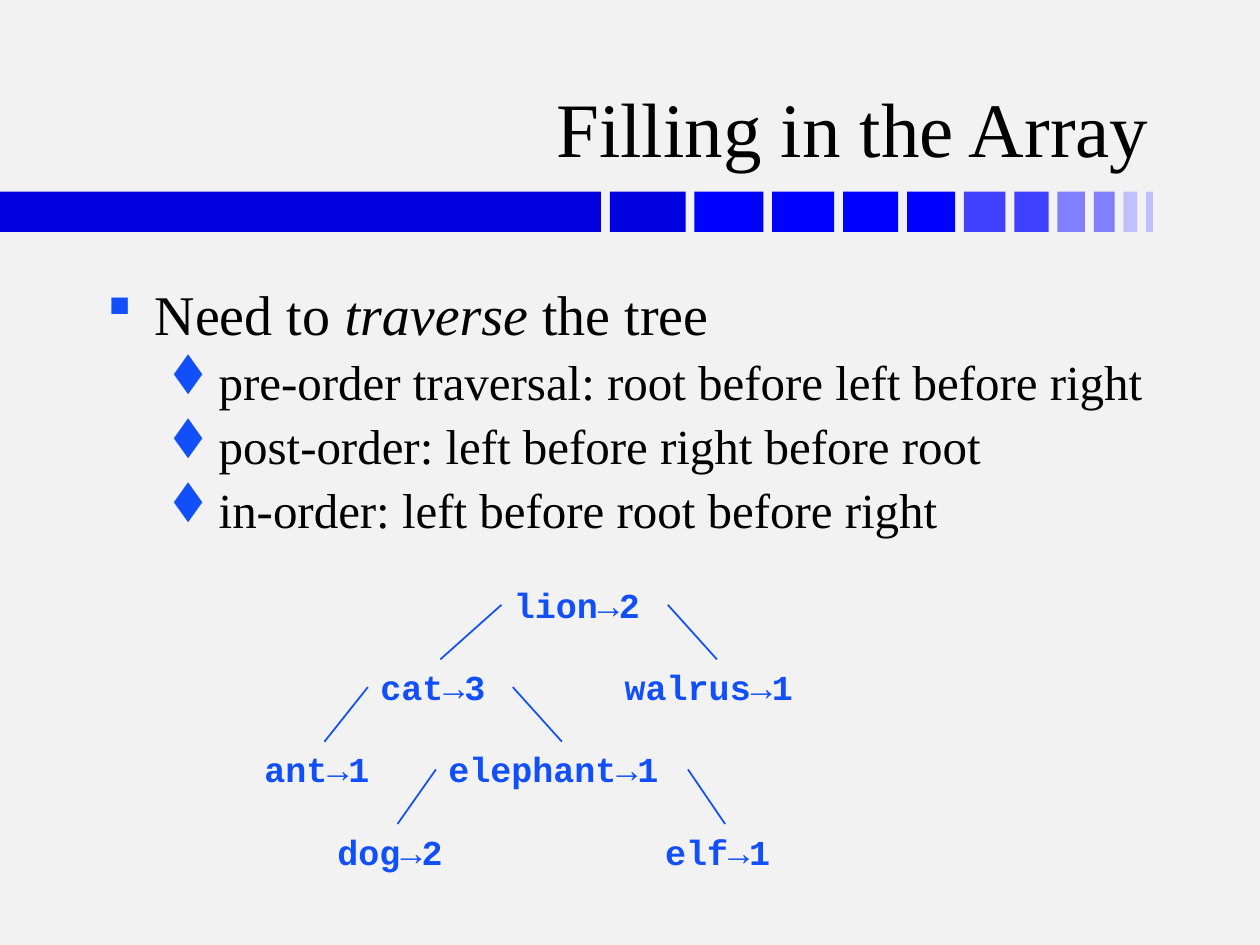
from lxml import etree
from pptx import Presentation, util as u
from pptx.dml.color import RGBColor
from pptx.enum import shapes, text
from pptx.oxml.ns import qn

PAPER = RGBColor(0xF2, 0xF2, 0xF2)
BLACK = RGBColor(0x00, 0x00, 0x00)
ACCENT = RGBColor(0x11, 0x4F, 0xFB)
NAVY = RGBColor(0x00, 0x00, 0xE0)
BLUE = RGBColor(0x00, 0x00, 0xFF)
MID = RGBColor(0x40, 0x40, 0xFF)
PALE = RGBColor(0x80, 0x80, 0xFF)
FAINT = RGBColor(0xC0, 0xC0, 0xFF)

CELL = u.Inches(0.1)
BLOCKS = [NAVY, BLUE, BLUE, BLUE, BLUE, MID, MID, PALE, PALE, FAINT, FAINT]
TITLE = dict(name="Times New Roman", size=u.Pt(44))
ITEM = dict(name="Times New Roman", size=u.Pt(32))
SUBITEM = dict(name="Times New Roman", size=u.Pt(28))
NODE = dict(name="Courier New", size=u.Pt(20), bold=True)
SQUARE, DIAMOND = "§", "t"
LEVELS = [(SQUARE, 0.38, 0.38, ITEM), (DIAMOND, 0.81, 0.31, SUBITEM)]
BULLETS = [
    (0, [("Need to ", False), ("traverse", True), (" the tree", False)]),
    (1, [("pre-order traversal: root before left before right", False)]),
    (1, [("post-order: left before right before root", False)]),
    (1, [("in-order: left before root before right", False)]),
]
NODES = [("lion→2", 19.8, 0), ("cat→3", 9.2, 1), ("walrus→1", 28.6, 1),
         ("ant→1", 0, 2), ("elephant→1", 14.6, 2), ("dog→2", 5.8, 3), ("elf→1", 31.8, 3)]
EDGES = [("lion→2", "cat→3", "walrus→1"), ("cat→3", "ant→1", "elephant→1"),
         ("elephant→1", "dog→2", "elf→1")]


def cells(*values):
    """Turn grid columns or rows into lengths."""
    return [u.Emu(round(v * CELL)) for v in values]


def style(font, color, formats):
    """Apply a dict of format values and a colour to a font."""
    for key, value in formats.items():
        setattr(font, key, value)
    font.color.rgb = color


def add_text(s, box, content, formats, color, align, anchor=text.MSO_ANCHOR.TOP):
    """Place one line of text in a box."""
    sp = s.shapes.add_textbox(*cells(*box))
    tf = sp.text_frame
    tf.word_wrap = True
    tf.vertical_anchor = anchor
    p = tf.paragraphs[0]
    p.alignment = align
    r = p.add_run()
    r.text = content
    style(r.font, color, formats)
    return sp


def add_band(s, box):
    """Draw a long bar followed by blocks that shrink and fade."""
    left, top, width, height = box
    gap, lead, count = 0.7, 47.7, len(BLOCKS)
    unit = (width - lead - gap * count) / sum(range(count + 1))
    bars = [(lead, NAVY)] + [(unit * (count - i), c) for i, c in enumerate(BLOCKS)]
    for w, color in bars:
        sp = s.shapes.add_shape(shapes.MSO_SHAPE.RECTANGLE, *cells(left, top, w, height))
        sp.shadow.inherit = False
        sp.fill.solid()
        sp.fill.fore_color.rgb = color
        sp.line.fill.background()
        left += w + gap


def add_bullet(p, char, margin, hang):
    """Give a paragraph a coloured symbol bullet and a hanging indent."""
    pPr = p._p.get_or_add_pPr()
    pPr.set("marL", str(u.Inches(margin)))
    pPr.set("indent", str(-u.Inches(hang)))
    clr = etree.SubElement(pPr, qn("a:buClr"))
    etree.SubElement(clr, qn("a:srgbClr")).set("val", str(ACCENT))
    font = etree.SubElement(pPr, qn("a:buFont"))
    font.set("typeface", "Wingdings")
    font.set("pitchFamily", "2")
    font.set("charset", "2")
    etree.SubElement(pPr, qn("a:buChar")).set("char", char)


def add_list(s, box):
    """Write the bulleted list."""
    tf = s.shapes.add_textbox(*cells(*box)).text_frame
    tf.word_wrap = True
    for i, (level, runs) in enumerate(BULLETS):
        p = tf.add_paragraph() if i else tf.paragraphs[0]
        p.level = level
        char, margin, hang, formats = LEVELS[level]
        add_bullet(p, char, margin, hang)
        if i:
            p.space_before = u.Pt(2.8)
        for content, italic in runs:
            r = p.add_run()
            r.text = content
            style(r.font, BLACK, dict(formats, italic=italic))


def add_edge(s, parent, side, child):
    """Join one side of a parent to the top of its child."""
    line = s.shapes.add_connector(shapes.MSO_CONNECTOR.STRAIGHT, 0, 0, 0, 0)
    line.begin_connect(parent, side)
    line.end_connect(child, 0)
    line.line.color.rgb = ACCENT
    line.line.width = u.Pt(1)
    etree.SubElement(line._element.spPr, qn("a:effectLst"))


def add_tree(s, box):
    """Draw the search tree, one grid level per generation."""
    left, top, width, height = box
    node_height = 4.4
    pitch = (height - node_height) / 3
    nodes = {}
    for label, col, level in NODES:
        place = (left + col, top + level * pitch, 3 + 1.7 * len(label), node_height)
        nodes[label] = add_text(s, place, label, NODE, ACCENT, text.PP_ALIGN.LEFT)
    for parent, before, after in EDGES:
        add_edge(s, nodes[parent], 1, nodes[before])
        add_edge(s, nodes[parent], 3, nodes[after])


def main():
    """Build and save the slide."""
    prs = Presentation()
    prs.slide_width, prs.slide_height = cells(100, 75)
    s = prs.slides.add_slide(prs.slide_layouts[6])
    s.background.fill.solid()
    s.background.fill.fore_color.rgb = PAPER
    add_band(s, (0, 15.2, 91.5, 3.2))
    add_text(s, (7.4, 1.9, 84.8, 12.3), "Filling in the Array", TITLE, BLACK,
             text.PP_ALIGN.RIGHT, text.MSO_ANCHOR.BOTTOM)
    add_list(s, (7.5, 21.7, 85, 45))
    add_tree(s, (20, 45.8, 45.2, 24))
    prs.save("out.pptx")


if __name__ == "__main__":
    main()
